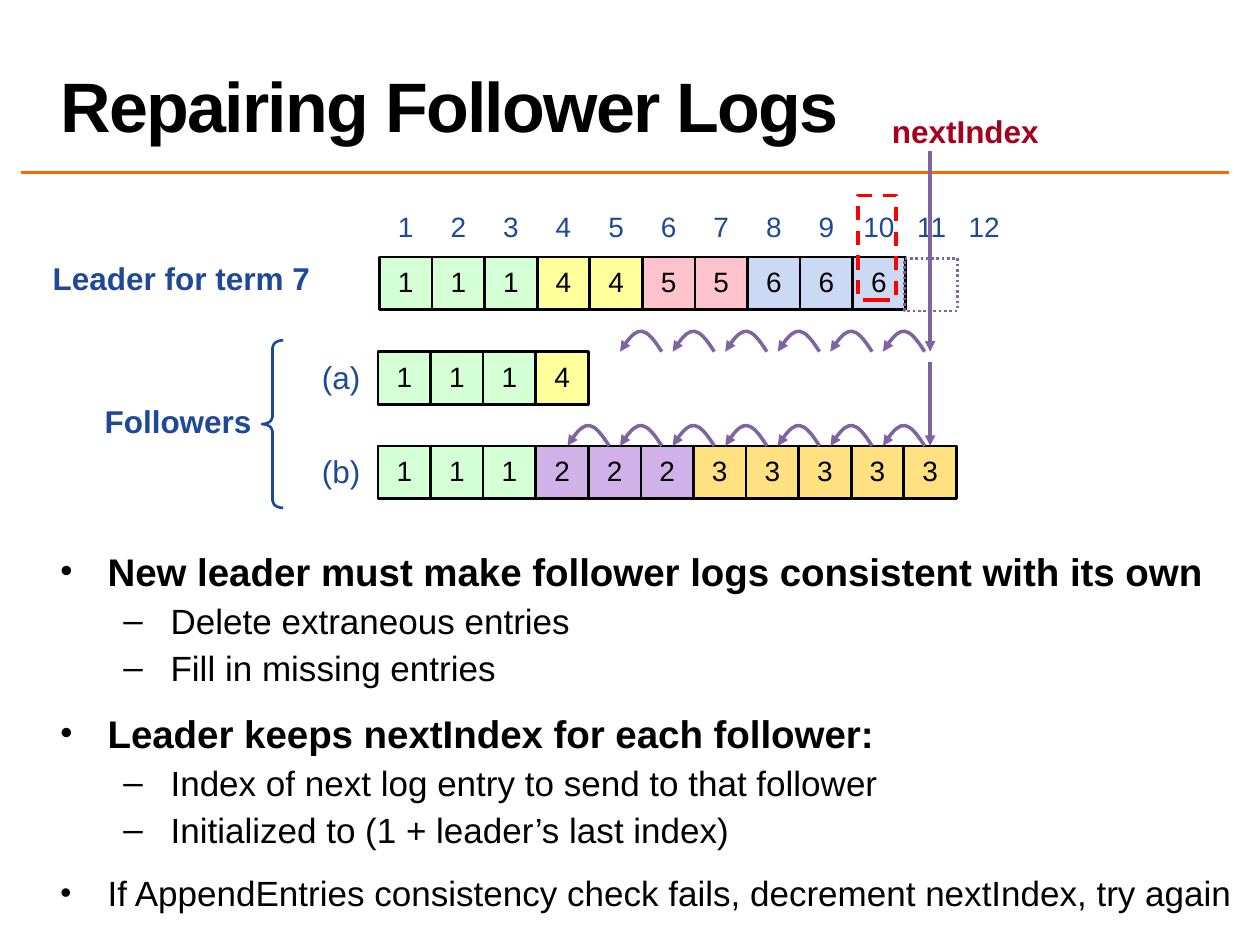
from lxml.etree import SubElement
from pptx import Presentation
from pptx.dml.color import RGBColor
from pptx.enum.dml import MSO_LINE_DASH_STYLE as Dash
from pptx.enum.shapes import MSO_CONNECTOR, MSO_SHAPE as Shape
from pptx.enum.text import MSO_ANCHOR as Anchor, PP_ALIGN as Align
from pptx.oxml.ns import qn
from pptx.util import Cm, Pt

COLORS = {
    "black": "000000", "blue": "1E4899", "orange": "FF6600", "purple": "8064A2",
    "crimson": "A5001E", "red": "FF0000",
}
TERM_COLORS = {1: "D5FFD5", 2: "D1B2E8", 3: "FFE181", 4: "FFFF9B", 5: "FFC3CE", 6: "CCD9F4"}
TITLE = "Repairing Follower Logs"
LEADER_LOG = (1, 1, 1, 4, 4, 5, 5, 6, 6, 6)
FOLLOWERS = (
    {"name": "(a)", "log": (1, 1, 1, 4), "top": 7.09, "steps": 6},
    {"name": "(b)", "log": (1, 1, 1, 2, 2, 2, 3, 3, 3, 3, 3), "top": 8.99, "steps": 7},
)
BULLETS = (
    (0, "New leader must make follower logs consistent with its own", True),
    (1, "Delete extraneous entries", False),
    (1, "Fill in missing entries", False),
    (0, "Leader keeps nextIndex for each follower:", True),
    (1, "Index of next log entry to send to that follower", False),
    (1, "Initialized to (1 + leader’s last index)", False),
    (0, "If AppendEntries consistency check fails, decrement nextIndex, try again", False),
)
CELL = 1.06
LEADER_LEFT, LEADER_TOP, FOLLOWER_LEFT = 7.65, 5.18, 7.62
NEXT_X = FOLLOWER_LEFT + 10.5 * CELL
HOP_WIDTH, HOP_HEIGHT = 0.84, 0.38
HOP_CURVE = ((0.51, -0.15), (0.31, -0.13), (0, HOP_HEIGHT))


def write(frame, text, size=16, color="black", bold=False, align=Align.LEFT, spacing=None):
    """Add one formatted paragraph to a text frame."""
    para = frame.add_paragraph() if frame.paragraphs[0].runs else frame.paragraphs[0]
    para.alignment = align
    para.line_spacing = spacing
    span = para.add_run()
    span.text = text
    span.font.name = "Arial"
    span.font.size = Pt(size)
    span.font.bold = bold
    span.font.color.rgb = RGBColor.from_string(COLORS[color])
    return para


def clear_insets(frame):
    """Remove the inner margins of a text frame."""
    frame.margin_left = frame.margin_right = frame.margin_top = frame.margin_bottom = 0


def add_label(page, text, area, insets=False, wrap=True, **style):
    """Place a text box at an area in centimetres."""
    frame = page.shapes.add_textbox(*map(Cm, area)).text_frame
    frame.word_wrap = wrap
    if not insets:
        clear_insets(frame)
    write(frame, text, **style)


def outline(line, color, width, dash=None, arrow=False):
    """Format a line, with an arrowhead at its end if wanted."""
    line.color.rgb = RGBColor.from_string(COLORS[color])
    line.width = Pt(width)
    if dash:
        line.dash_style = dash
    if arrow:
        SubElement(line._get_or_add_ln(), qn("a:tailEnd"), type="triangle")


def add_box(page, kind, area, color="black", width=1.5, fill=None, dash=None):
    """Draw a preset shape with an outline and an optional fill."""
    box = page.shapes.add_shape(kind, *map(Cm, area))
    box.shadow.inherit = False
    if fill:
        box.fill.solid()
        box.fill.fore_color.rgb = RGBColor.from_string(fill)
    else:
        box.fill.background()
    outline(box.line, color, width, dash)
    return box


def add_log(page, terms, left, top):
    """Draw a row of log entries and return its cells."""
    cells = []
    for index, term in enumerate(terms):
        area = (left + index * CELL, top, CELL, CELL)
        box = add_box(page, Shape.RECTANGLE, area, fill=TERM_COLORS[term])
        clear_insets(box.text_frame)
        box.text_frame.vertical_anchor = Anchor.MIDDLE
        write(box.text_frame, str(term), align=Align.CENTER, spacing=Pt(17))
        cells.append(box)
    return cells


def add_line(page, start, end, color, arrow=False):
    """Draw a straight connector between two points."""
    line = page.shapes.add_connector(MSO_CONNECTOR.STRAIGHT, *map(Cm, start + end))
    SubElement(line._element.spPr, qn("a:effectLst"))
    outline(line.line, color, 2, arrow=arrow)
    return line


def add_hop(page, right, bottom):
    """Draw a curved arrow that steps one entry to the left."""
    builder = page.shapes.build_freeform(Cm(right), Cm(bottom))
    builder.add_line_segments(
        [(Cm(right - HOP_WIDTH / 2), Cm(bottom - HOP_HEIGHT)), (Cm(right - HOP_WIDTH), Cm(bottom))],
        close=False)
    hop = builder.convert_to_shape()
    hop.shadow.inherit = False
    hop.fill.background()
    outline(hop.line, "purple", 2, arrow=True)
    track = next(hop._element.iter(qn("a:path")))
    for segment in track.findall(qn("a:lnTo")):
        track.remove(segment)
    curve = SubElement(track, qn("a:cubicBezTo"))
    for x, y in HOP_CURVE:
        SubElement(curve, qn("a:pt"), x=str(Cm(x)), y=str(Cm(y)))


def add_title(page):
    """Place and format the title."""
    title = page.shapes.title
    title.left, title.top, title.width, title.height = map(Cm, (0.97, 0.05, 23.8, 3.02))
    title.text_frame.vertical_anchor = Anchor.BOTTOM
    para = write(title.text_frame, TITLE, size=40, bold=True, spacing=0.8)
    para.runs[0].font._element.set("spc", "-100")


def add_bullets(page):
    """Write the two-level list below the diagram."""
    frame = page.shapes.add_textbox(*map(Cm, (0.97, 10.92, 24.43, 8.05))).text_frame
    frame.word_wrap = True
    for level, text, bold in BULLETS:
        para = write(frame, text, size=22 if bold else 20, bold=bold)
        para.level = level
        para.space_before = Pt(3 if level else 12)
        props = para._p.get_or_add_pPr()
        props.set("marL", str(Cm(0.95 + 1.27 * level)))
        props.set("indent", str(Cm(-0.95)))
        if not level:
            SubElement(props, qn("a:buSzPct"), val="90000")
        SubElement(props, qn("a:buFont"), typeface="Arial")
        SubElement(props, qn("a:buChar"), char="–" if level else "•")


def main():
    """Build the slide and save it."""
    deck = Presentation()
    deck.slide_width, deck.slide_height = Cm(25.4), Cm(19.05)
    page = deck.slides.add_slide(deck.slide_layouts[5])
    add_line(page, (0.43, 3.48), (24.77, 3.48), "orange")
    add_title(page)

    heading = {"size": 18, "bold": True, "spacing": Pt(19)}
    add_log(page, LEADER_LOG, LEADER_LEFT, LEADER_TOP)
    add_label(page, "Leader for term 7", (-0.2, 5.31, 6.45, 0.69),
              color="blue", align=Align.RIGHT, **heading)
    for number in range(1, 13):
        width = CELL if number < 10 else 1.47
        left = LEADER_LEFT + (number - 0.5) * CELL - width / 2
        add_label(page, str(number), (left, 4.09, width, 0.94), insets=True,
                  color="blue", align=Align.CENTER)

    brace = add_box(page, Shape.LEFT_BRACE, (5.28, 6.86, 0.43, 3.38), color="blue")
    brace.adjustments[0] = 0.34
    add_label(page, "Followers", (2.11, 8.2, 3, 0.69), wrap=False, color="blue", **heading)
    for follower in FOLLOWERS:
        top = follower["top"]
        cells = add_log(page, follower["log"], FOLLOWER_LEFT, top)
        add_label(page, follower["name"], (6.35, top + 0.12, CELL, 0.76),
                  size=18, color="blue", align=Align.CENTER)
        for step in range(follower["steps"]):
            add_hop(page, NEXT_X - 0.11 - step * CELL, top)

    first_top, last_top = (follower["top"] for follower in FOLLOWERS)
    add_line(page, (NEXT_X, 3.05), (NEXT_X, first_top), "purple", arrow=True)
    pointer = add_line(page, (NEXT_X, 7.29), (NEXT_X, last_top), "purple", arrow=True)
    pointer.end_connect(cells[-1], 0)
    add_label(page, "nextIndex", (17.98, 2.36, 3, 0.69), wrap=False, color="crimson", **heading)
    add_box(page, Shape.RECTANGLE, (18.24, 5.21, CELL, CELL), color="purple", dash=Dash.ROUND_DOT)
    add_box(page, Shape.RECTANGLE, (17.3, 3.94, 0.76, 2.11), color="red", width=2, dash=Dash.DASH)
    add_bullets(page)
    deck.save("out.pptx")


if __name__ == "__main__":
    main()
